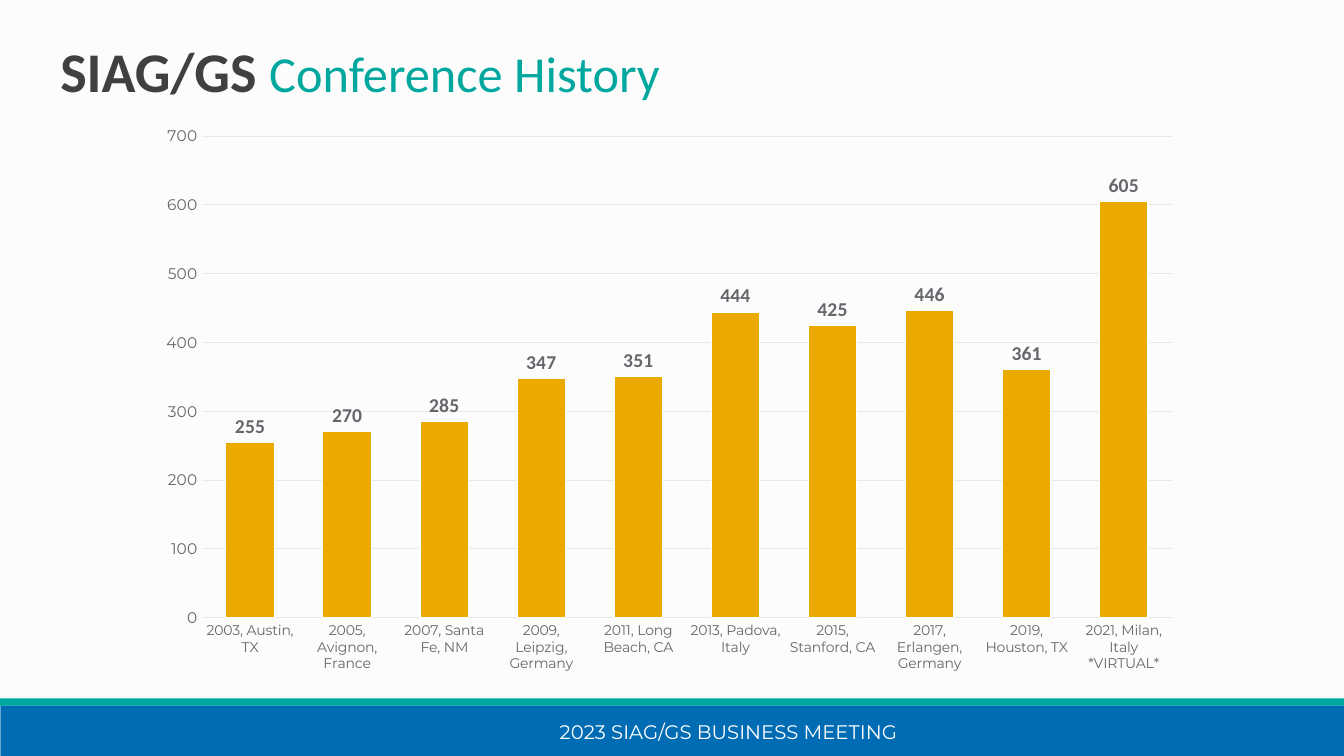
from lxml import etree
from pptx import Presentation
from pptx.chart.data import CategoryChartData
from pptx.dml.color import RGBColor
from pptx.enum import chart as charts, shapes, text
from pptx.oxml import parse_xml
from pptx.oxml.ns import nsdecls
from pptx.util import Cm, Pt

# Content
TITLE = [("SIAG/GS ", 40, True), ("Conference History", 36, False)]
FOOTER = "2023 SIAG/GS BUSINESS MEETING"
ATTENDANCE = [
    ("2003, Austin, TX", 255),
    ("2005, Avignon, France", 270),
    ("2007, Santa Fe, NM", 285),
    ("2009, Leipzig, Germany", 347),
    ("2011, Long Beach, CA", 351),
    ("2013, Padova, Italy", 444),
    ("2015, Stanford, CA", 425),
    ("2017, Erlangen, Germany", 446),
    ("2019, Houston, TX", 361),
    ("2021, Milan, Italy *VIRTUAL*", 605),
]

# Colours and fonts
BACKGROUND = RGBColor(0xFC, 0xFC, 0xFC)
BLUE = RGBColor(0x00, 0x6C, 0xB4)
BLUE_EDGE = RGBColor(0x66, 0xA7, 0xD2)
TEAL = RGBColor(0x00, 0xA7, 0x9F)
GOLD = RGBColor(0xEA, 0xAA, 0x00)
DARK = RGBColor(0x40, 0x40, 0x40)
GREY = RGBColor(0x66, 0x67, 0x6C)
GRID = RGBColor(0xE8, 0xE8, 0xE9)
WHITE = RGBColor(0xFF, 0xFF, 0xFF)
BLACK = RGBColor(0, 0, 0)
HEADING_FONT, BODY_FONT = "Calibri", "Montserrat"

# Plot area inside the chart frame, as fractions of it
PLOT = {"x": 0.053, "y": 0.037, "w": 0.926, "h": 0.847}


def style_font(font, name, size, color, bold=False):
    font.name, font.size, font.bold = name, Pt(size), bold
    font.color.rgb = color


def style_line(line, color, width=0.75):
    line.color.rgb = color
    line.width = Pt(width)


def add_band(slide, top, height, color):
    band = slide.shapes.add_shape(
        shapes.MSO_SHAPE.RECTANGLE, 0, Cm(top), presentation.slide_width, Cm(height))
    band.shadow.inherit = False
    band.fill.solid()
    band.fill.fore_color.rgb = color
    band.line.fill.background()
    return band


def add_text_frame(slide, left, top, width, height):
    frame = slide.shapes.add_textbox(Cm(left), Cm(top), Cm(width), Cm(height)).text_frame
    frame.word_wrap = True
    return frame


def fix_plot_area(chart):
    modes = "".join(f'<c:{key}Mode val="edge"/>' for key in "xy")
    sizes = "".join(f'<c:{key} val="{value}"/>' for key, value in PLOT.items())
    plot_area = chart.plots[0]._element.getparent()
    for layout in plot_area.findall(etree.QName(plot_area).text.replace("plotArea", "layout")):
        plot_area.remove(layout)
    plot_area.insert(0, parse_xml(
        f'<c:layout {nsdecls("c")}><c:manualLayout><c:layoutTarget val="inner"/>'
        f'{modes}{sizes}</c:manualLayout></c:layout>'))


# Slide
presentation = Presentation()
presentation.slide_width, presentation.slide_height = Cm(33.87), Cm(19.05)
slide = presentation.slides.add_slide(presentation.slide_layouts[6])
slide.background.fill.solid()
slide.background.fill.fore_color.rgb = BACKGROUND

# Footer
blue_band = add_band(slide, 17.78, 1.27, BLUE)
style_line(blue_band.line, BLUE_EDGE, 0.5)
add_band(slide, 17.6, 0.18, TEAL)
footer = add_text_frame(slide, 9.47, 17.93, 17.78, 1.02)
footer.vertical_anchor = text.MSO_ANCHOR.MIDDLE
paragraph = footer.paragraphs[0]
paragraph.text = FOOTER
paragraph.alignment = text.PP_ALIGN.CENTER
style_font(paragraph.font, BODY_FONT, 14, WHITE)

# Title
paragraph = add_text_frame(slide, 1.27, 0.79, 22.33, 1.96).paragraphs[0]
for words, size, bold in TITLE:
    run = paragraph.add_run()
    run.text = words
    style_font(run.font, HEADING_FONT, size, DARK if bold else TEAL, bold)

# Attendance chart
data = CategoryChartData()
data.categories = [place for place, _ in ATTENDANCE]
data.add_series("Series 1", [count for _, count in ATTENDANCE])
chart = slide.shapes.add_chart(
    charts.XL_CHART_TYPE.COLUMN_CLUSTERED,
    Cm(3.68), Cm(2.9), Cm(26.42), Cm(14.33), data).chart
style_font(chart.font, HEADING_FONT, 10, BLACK)
chart.has_legend = False
chart.has_title = False
fix_plot_area(chart)

plot = chart.plots[0]
plot.vary_by_categories = False
plot.gap_width, plot.overlap = 100, -24
columns = plot.series[0].format
columns.fill.solid()
columns.fill.fore_color.rgb = GOLD
style_line(columns.line, WHITE)

plot.has_data_labels = True
labels = plot.data_labels
labels.show_value = True
labels.position = charts.XL_LABEL_POSITION.OUTSIDE_END
style_font(labels.font, HEADING_FONT, 14, GREY, True)

# Axes
for axis, size in ((chart.category_axis, 10), (chart.value_axis, 11)):
    axis.major_tick_mark = axis.minor_tick_mark = charts.XL_TICK_MARK.NONE
    style_font(axis.tick_labels.font, BODY_FONT, size, GREY)
style_line(chart.category_axis.format.line, GRID)
counts = chart.value_axis
counts.minimum_scale, counts.maximum_scale, counts.major_unit = 0, 700, 100
counts.format.line.fill.background()
counts.has_major_gridlines = True
style_line(counts.major_gridlines.format.line, GRID)

presentation.save("out.pptx")
